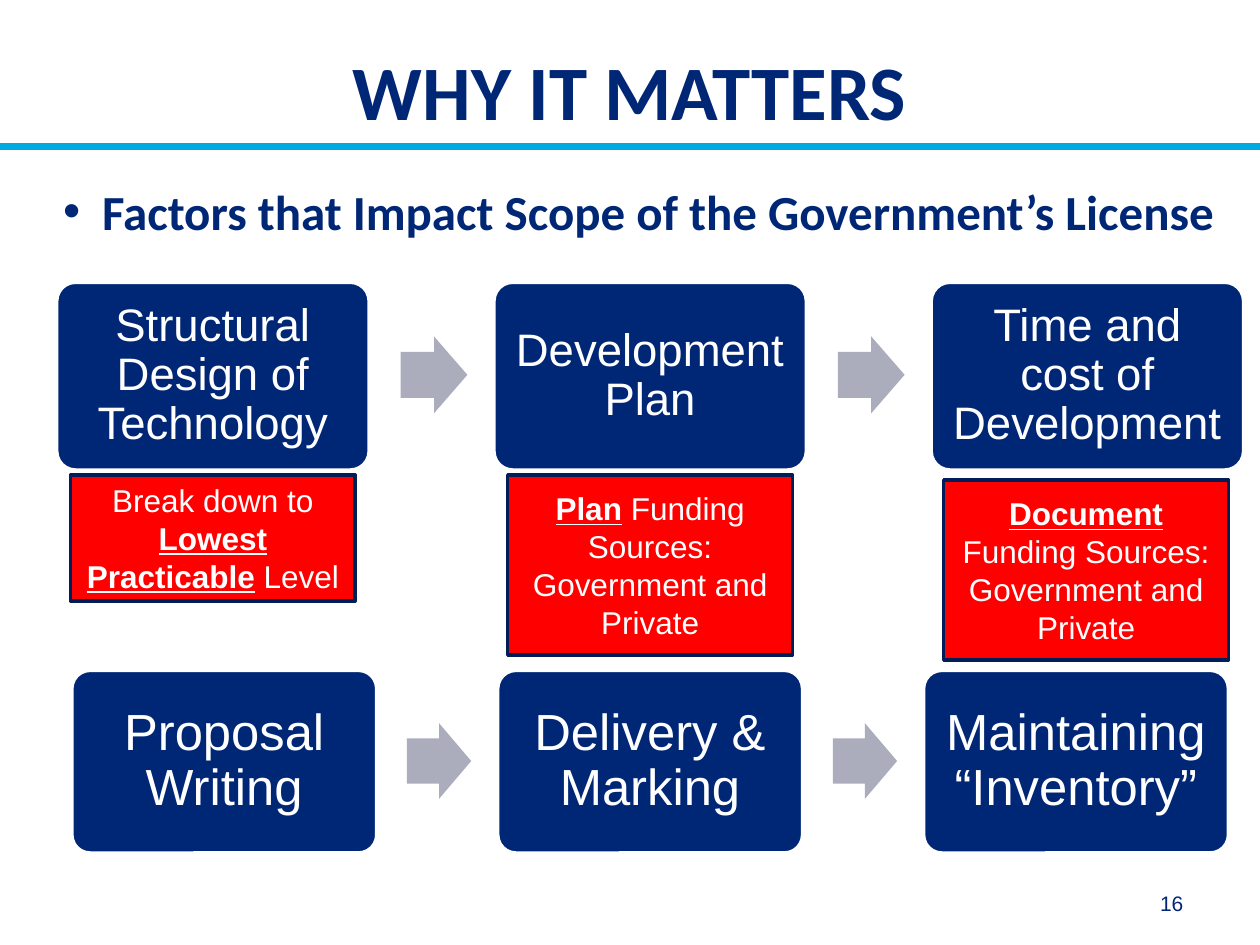
from dataclasses import dataclass

from lxml.etree import SubElement
from pptx import Presentation
from pptx.dml.color import RGBColor
from pptx.enum.shapes import MSO_CONNECTOR, MSO_SHAPE
from pptx.enum.text import MSO_ANCHOR, MSO_AUTO_SIZE, PP_ALIGN
from pptx.oxml.ns import qn
from pptx.util import Inches, Pt

NAVY = "002776"
WHITE = "FFFFFF"


@dataclass
class Row:
    left: float
    top: float
    width: float
    height: float
    pitch: float
    inset: float
    size: int
    arrow: tuple[float, float, float, float]
    labels: list[str]


@dataclass
class Note:
    left: float
    top: float
    height: float
    runs: list[tuple[str, bool]]


ROWS = [
    Row(0.45, 2.24, 2.48, 1.49, 3.47, 0.11, 26, (3.18, 2.67, 0.53, 0.61),
        ["Structural Design of Technology", "Development Plan",
         "Time and cost of Development"]),
    Row(0.57, 5.32, 2.42, 1.45, 3.38, 0.12, 29, (3.23, 5.74, 0.51, 0.6),
        ["Proposal Writing", "Delivery & Marking", "Maintaining “Inventory”"]),
]
SOURCES = "Funding Sources: Government and Private"
NOTES = [
    Note(0.56, 3.77, 1, [("Break down to ", False), ("Lowest Practicable", True),
                         (" Level", False)]),
    Note(4.03, 3.77, 1.43, [("Plan", True), (" " + SOURCES, False)]),
    Note(7.49, 3.81, 1.43, [("Document ", True), (SOURCES, False)]),
]


def paint(color, code: str) -> None:
    color.rgb = RGBColor.from_string(code)


def style(font, name: str, size: int, code: str, bold: bool = False) -> None:
    font.name = name
    font.size = Pt(size)
    font.bold = bold
    paint(font.color, code)


def place(shape, left: float, top: float, width: float, height: float) -> None:
    shape.left, shape.top = Inches(left), Inches(top)
    shape.width, shape.height = Inches(width), Inches(height)


def pad(frame, side: float, edge: float) -> None:
    frame.margin_left = frame.margin_right = Inches(side)
    frame.margin_top = frame.margin_bottom = Inches(edge)


def draw(slide, kind, box: tuple, fill: str, line: str = ""):
    shape = slide.shapes.add_shape(kind, *map(Inches, box))
    shape.shadow.inherit = False
    shape.fill.solid()
    paint(shape.fill.fore_color, fill)
    if line:
        paint(shape.line.color, line)
        shape.line.width = Pt(2)
    else:
        shape.line.fill.background()
    frame = shape.text_frame
    frame.word_wrap = True
    frame.vertical_anchor = MSO_ANCHOR.MIDDLE
    return shape


def draw_row(slide, row: Row) -> None:
    for step, label in enumerate(row.labels):
        shift = step * row.pitch
        card = draw(slide, MSO_SHAPE.ROUNDED_RECTANGLE,
                    (row.left + shift, row.top, row.width, row.height), NAVY, WHITE)
        card.adjustments[0] = 0.1
        frame = card.text_frame
        pad(frame, row.inset, row.inset)
        para = frame.paragraphs[0]
        para.text = label
        para.alignment = PP_ALIGN.CENTER
        para.line_spacing = 0.9
        style(para.font, "Arial", row.size, WHITE)
        if step < len(row.labels) - 1:
            left, *rest = row.arrow
            arrow = draw(slide, MSO_SHAPE.RIGHT_ARROW, (left + shift, *rest), "ABADBD")
            arrow.adjustments[0] = 0.6
            arrow.adjustments[1] = 0.5


def draw_note(slide, note: Note) -> None:
    box = draw(slide, MSO_SHAPE.RECTANGLE,
               (note.left, note.top, 2.26, note.height), "FF0000", "001D57")
    para = box.text_frame.paragraphs[0]
    para.alignment = PP_ALIGN.CENTER
    style(para.font, "Arial", 18, WHITE)
    for text, strong in note.runs:
        run = para.add_run()
        run.text = text
        if strong:
            run.font.bold = run.font.underline = True


def draw_rule(slide) -> None:
    rule = slide.shapes.add_connector(
        MSO_CONNECTOR.STRAIGHT, 0, Inches(1.16), Inches(10), Inches(1.16))
    paint(rule.line.color, "00A9E0")
    rule.line.width = Pt(4)
    SubElement(rule._element.spPr, qn("a:effectLst"))


def fill_title(title) -> None:
    place(title, 0.5, 0.14, 9, 0.99)
    frame = title.text_frame
    frame.auto_size = MSO_AUTO_SIZE.NONE
    frame.vertical_anchor = MSO_ANCHOR.BOTTOM
    pad(frame, 0, 0.05)
    para = frame.paragraphs[0]
    para.text = "WHY IT MATTERS"
    para.alignment = PP_ALIGN.CENTER
    style(para.font, "Calibri", 44, NAVY, True)


def fill_body(body) -> None:
    place(body, 0.5, 1.44, 9.32, 5.2)
    frame = body.text_frame
    frame.auto_size = MSO_AUTO_SIZE.NONE
    pad(frame, 0, 0)
    para = frame.paragraphs[0]
    para.text = "Factors that Impact Scope of the Government’s License"
    para.space_before = Pt(0)
    para.space_after = Pt(24)
    props = para._p.get_or_add_pPr()
    props.set("marL", str(Inches(0.31)))
    props.set("indent", str(-Inches(0.31)))
    SubElement(props, qn("a:buFont")).set("typeface", "Arial")
    SubElement(props, qn("a:buChar")).set("char", "•")
    style(para.font, "Calibri", 28, NAVY, True)


def draw_page(slide) -> None:
    box = slide.shapes.add_textbox(*map(Inches, (8.44, 7.05, 1.05, 0.27)))
    frame = box.text_frame
    frame.word_wrap = True
    frame.vertical_anchor = MSO_ANCHOR.BOTTOM
    para = frame.paragraphs[0]
    para.text = "16"
    para.alignment = PP_ALIGN.RIGHT
    style(para.font, "Arial", 12, NAVY)


def main() -> None:
    deck = Presentation()
    deck.slide_width, deck.slide_height = Inches(10), Inches(7.5)
    slide = deck.slides.add_slide(deck.slide_layouts[1])
    draw_rule(slide)
    fill_title(slide.shapes.title)
    fill_body(slide.placeholders[1])
    draw_page(slide)
    for row in ROWS:
        draw_row(slide, row)
    for note in NOTES:
        draw_note(slide, note)
    deck.save("out.pptx")


if __name__ == "__main__":
    main()
